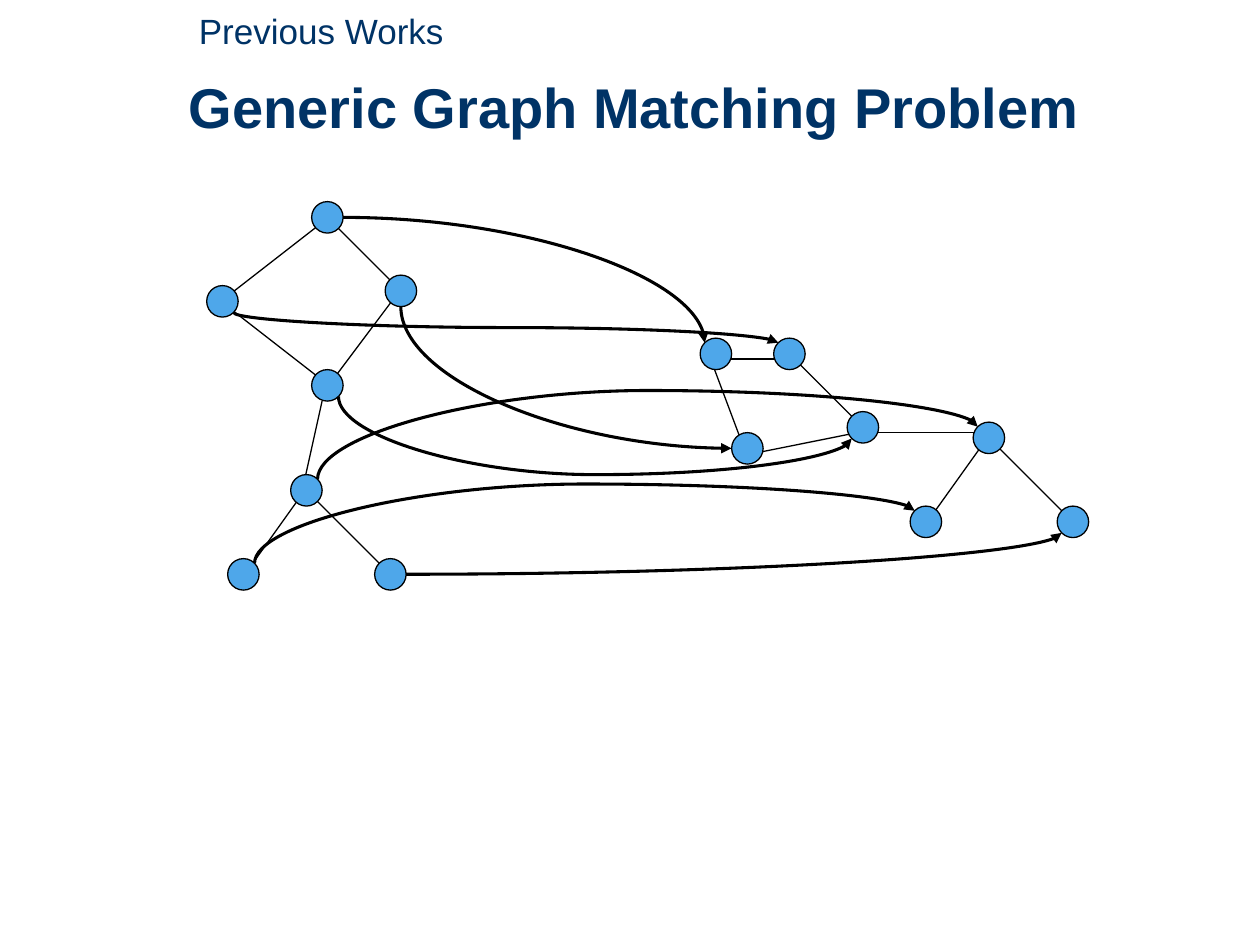
from dataclasses import dataclass
from typing import Any

from lxml import etree
from pptx import Presentation
from pptx.dml.color import RGBColor
from pptx.enum.shapes import MSO_CONNECTOR, MSO_SHAPE
from pptx.enum.text import MSO_ANCHOR, MSO_AUTO_SIZE, PP_ALIGN
from pptx.oxml.ns import qn
from pptx.util import Inches, Pt

STRAIGHT, CURVE = MSO_CONNECTOR.STRAIGHT, MSO_CONNECTOR.CURVE
ELLIPSE = MSO_SHAPE.OVAL
MIDDLE, TOP = MSO_ANCHOR.MIDDLE, MSO_ANCHOR.TOP
RIGHT, LEFT = PP_ALIGN.RIGHT, PP_ALIGN.LEFT
NO_FIT, GROW = MSO_AUTO_SIZE.NONE, MSO_AUTO_SIZE.SHAPE_TO_FIT_TEXT

WIDTH, HEIGHT = 10, 7.5
UNIT = 1 / 12
GRID_LEFT, GRID_TOP = 1.64, 1.6
NODE_SIZE = 3
RADIUS = NODE_SIZE / 2
DIAGONAL = RADIUS / 2 ** 0.5
BLACK, BLUE, NAVY = "000000", "4EA7EA", "003366"

SITES = {
    "right": (RADIUS, 0), "left": (-RADIUS, 0), "bottom": (0, RADIUS),
    "top left": (-DIAGONAL, -DIAGONAL), "top right": (DIAGONAL, -DIAGONAL),
    "bottom left": (-DIAGONAL, DIAGONAL), "bottom right": (DIAGONAL, DIAGONAL),
}

NODES = {
    "source foot left": (2, 34), "source foot right": (16, 34),
    "source hip": (8, 26), "source left": (0, 8), "source neck": (10, 16),
    "source right": (17, 7), "source top": (10, 0),
    "target foot left": (67, 29), "target foot right": (81, 29),
    "target hip": (73, 21), "target top": (47, 13), "target right": (50, 22),
    "target neck": (61, 20), "target left": (54, 13),
}

EDGES = [
    ((4, 35), (9, 28)), ((17, 35), (10, 28)), ((9, 28), (11, 19)),
    ((12, 17), (18, 9)), ((11, 17), (2, 10)), ((2, 9), (11, 2)),
    ((18, 8), (12, 2)), ((69, 30), (74, 23)), ((82, 30), (75, 23)),
    ((74, 22), (63, 22)), ((52, 24), (62, 22)), ((51, 23), (48, 15)),
    ((49, 15), (55, 15)), ((62, 21), (56, 15)),
]


@dataclass(frozen=True)
class Match:
    name: str
    start_site: str
    end_site: str
    upright: bool = False
    bend: float | None = None


MATCHES = [
    Match("top", "right", "top left"),
    Match("right", "bottom", "left", True),
    Match("foot right", "right", "bottom left"),
    Match("foot left", "top right", "top left", True, 1.51),
    Match("hip", "top right", "top left", True, 1.69),
    Match("left", "bottom right", "top left", True, 0.5),
    Match("neck", "bottom right", "bottom left", True, 1.86),
]


def color(value: str) -> RGBColor:
    return RGBColor.from_string(value)


def position(column: float, row: float) -> tuple[float, float]:
    return GRID_LEFT + column * UNIT, GRID_TOP + row * UNIT


def apply(target: Any, values: dict[str, Any]) -> None:
    for name, value in values.items():
        setattr(target, name, value)


def style_line(line: Any, width: float) -> None:
    line.fill.solid()
    line.fill.fore_color.rgb = color(BLACK)
    line.width = Pt(width)


def draw_connector(slide: Any, kind: Any, start: tuple[float, float],
                   end: tuple[float, float], width: float) -> Any:
    connector = slide.shapes.add_connector(kind, *map(Inches, start + end))
    style_line(connector.line, width)
    etree.SubElement(connector._element.spPr, qn("a:effectLst"))
    return connector


def draw_node(slide: Any, column: float, row: float) -> None:
    left, top = position(column, row)
    size = NODE_SIZE * UNIT
    node = slide.shapes.add_shape(ELLIPSE, *map(Inches, (left, top, size, size)))
    node.shadow.inherit = False
    node.fill.solid()
    node.fill.fore_color.rgb = color(BLUE)
    style_line(node.line, 0.75)


def site_position(node: str, site: str) -> tuple[float, float]:
    column, row = NODES[node]
    across, down = SITES[site]
    return position(column + RADIUS + across, row + RADIUS + down)


def draw_match(slide: Any, match: Match) -> None:
    start_x, start_y = site_position(f"source {match.name}", match.start_site)
    end_x, end_y = site_position(f"target {match.name}", match.end_site)
    width, height = end_x - start_x, abs(end_y - start_y)
    if match.upright:
        width, height = height, width
    left = (start_x + end_x - width) / 2
    top = (start_y + end_y - height) / 2
    connector = draw_connector(slide, CURVE, (left, top),
                               (left + width, top + height), 1.75)
    properties = connector._element.spPr
    transform = properties.find(qn("a:xfrm"))
    downward = end_y > start_y
    if match.upright:
        transform.set("rot", str(270 * 60000))
        if downward:
            transform.set("flipH", "1")
    elif not downward:
        transform.set("flipV", "1")
    geometry = properties.find(qn("a:prstGeom"))
    if match.bend is None:
        geometry.set("prst", "curvedConnector2")
    else:
        guides = geometry.find(qn("a:avLst"))
        etree.SubElement(guides, qn("a:gd"), name="adj1",
                         fmla=f"val {round(match.bend * 100000)}")
    etree.SubElement(properties.find(qn("a:ln")), qn("a:tailEnd"), type="triangle")


def write(shape: Any, text: str, size: float, bold: bool, alignment: Any,
          frame_format: dict[str, Any]) -> None:
    apply(shape.text_frame, frame_format)
    paragraph = shape.text_frame.paragraphs[0]
    paragraph.text = text
    paragraph.alignment = alignment
    apply(paragraph.font, {"name": "Arial", "size": Pt(size), "bold": bold})
    paragraph.font.color.rgb = color(NAVY)


def main() -> None:
    presentation = Presentation()
    apply(presentation, {"slide_width": Inches(WIDTH), "slide_height": Inches(HEIGHT)})
    slide = presentation.slides.add_slide(presentation.slide_layouts[5])

    for start, end in EDGES:
        draw_connector(slide, STRAIGHT, position(*start), position(*end), 0.75)
    for column, row in NODES.values():
        draw_node(slide, column, row)
    for match in MATCHES:
        draw_match(slide, match)

    title = slide.shapes.title
    apply(title, {"left": Inches(-0.47), "top": Inches(0.37),
                  "width": Inches(9.14), "height": Inches(0.94)})
    write(title, "Generic Graph Matching Problem", 32, True, RIGHT,
          {"vertical_anchor": MIDDLE, "word_wrap": True, "auto_size": NO_FIT})
    section = slide.shapes.add_textbox(*map(Inches, (1.48, 0.03, 2.16, 0.44)))
    write(section, "Previous Works", 20, False, LEFT,
          {"vertical_anchor": TOP, "word_wrap": False, "auto_size": GROW})
    presentation.save("out.pptx")


if __name__ == "__main__":
    main()
